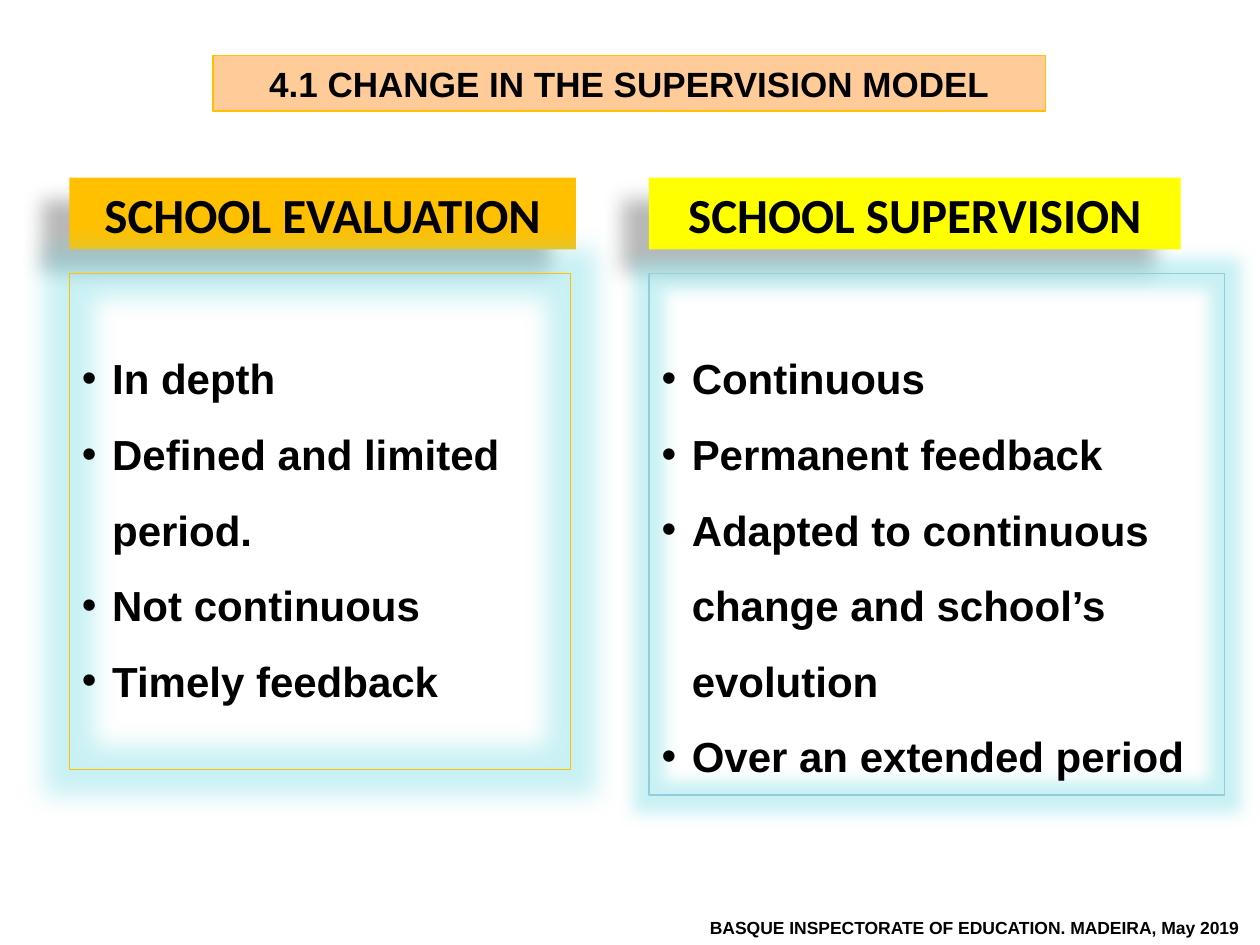
from lxml.etree import SubElement as Sub
from pptx import Presentation
from pptx.dml.color import RGBColor as RGB
from pptx.enum.text import MSO_ANCHOR as Anchor, MSO_AUTO_SIZE as Fit, PP_ALIGN as Align
from pptx.oxml.ns import qn
from pptx.util import Inches, Pt

BLACK = RGB(0, 0, 0)
AMBER = RGB(0xFF, 0xC0, 0x00)
YELLOW = RGB(0xFF, 0xFF, 0x00)
PEACH = RGB(0xFF, 0xCC, 0x99)
TEAL = RGB(0x92, 0xCD, 0xDC)
AQUA = RGB(0x78, 0xDC, 0xE4)
TOP, HEAD, GAP = 1.41, 0.57, 0.19
INDENT, DROP = 0.24, 0.43


def place(shape, x, y, w, h):
    """Move a shape to a box given in inches."""
    shape.left, shape.top = Inches(x), Inches(y)
    shape.width, shape.height = Inches(w), Inches(h)


def style(par, size, name="Arial"):
    """Give a paragraph bold black type with no space before."""
    par.space_before = Pt(0)
    font = par.font
    font.size, font.name, font.bold = Pt(size), name, True
    font.color.rgb = BLACK


def effect(shape, kind, color, alpha, **attrs):
    """Add a glow or shadow to a shape."""
    group = Sub(shape._element.spPr, qn("a:effectLst"))
    node = Sub(group, qn("a:" + kind), {k: str(v) for k, v in attrs.items()})
    tint = Sub(node, qn("a:srgbClr"), val=str(color))
    Sub(tint, qn("a:alpha"), val=str(alpha * 1000))


def border(shape, color):
    """Draw a thin outline."""
    shape.line.color.rgb = color
    shape.line.width = Pt(0.75)


def label(shape, box, text, fill, size, name="Arial"):
    """Fill a placeholder as a centred one-line banner."""
    place(shape, *box)
    shape.fill.solid()
    shape.fill.fore_color.rgb = fill
    frame = shape.text_frame
    frame.text = text
    frame.auto_size = Fit.NONE
    frame.vertical_anchor = Anchor.MIDDLE
    par = frame.paragraphs[0]
    par.alignment = Align.CENTER
    style(par, size, name)


def points(shape, box, items, line, glow):
    """Fill a placeholder as an outlined, glowing bullet list."""
    place(shape, *box)
    shape.fill.background()
    border(shape, line)
    effect(shape, "glow", AQUA, 40, rad=Pt(glow))
    frame = shape.text_frame
    frame.text = "\n".join(items)
    frame.auto_size = Fit.NONE
    frame.vertical_anchor = Anchor.TOP
    frame.margin_top = Inches(DROP)
    for par in frame.paragraphs:
        props = par._p.get_or_add_pPr()
        props.set("marL", str(Inches(INDENT)))
        props.set("indent", str(-Inches(INDENT)))
        Sub(props, qn("a:buFont"), typeface="Arial")
        Sub(props, qn("a:buChar"), char="•")
        par.line_spacing = 1.5
        style(par, 24)


def column(head, body, x, wide, box, title, fill, items, line, glow):
    """Set a heading with its list below, from the left edge x."""
    label(head, (x, TOP, wide, HEAD), title, fill, 28, "Calibri")
    effect(head, "outerShdw", BLACK, 28, blurRad=Pt(11.8), dist=Pt(19.7),
           dir=141 * 60000, algn="ctr", rotWithShape=0)
    points(body, (x, TOP + HEAD + GAP, *box), items, line, glow)


def footer(slide, box, text):
    """Write the source line at the lower right."""
    note = slide.shapes.add_textbox(0, 0, 0, 0)
    place(note, *box)
    frame = note.text_frame
    frame.word_wrap = False
    frame.text = text
    par = frame.paragraphs[0]
    par.alignment = Align.RIGHT
    style(par, 10)


def main():
    """Build the slide and save it."""
    deck = Presentation()
    deck.slide_width, deck.slide_height = Inches(10), Inches(7.5)
    slide = deck.slides.add_slide(deck.slide_layouts[4])
    title, head1, body1, head2, body2 = slide.placeholders
    label(title, (1.69, 0.44, 6.61, 0.44),
          "4.1 CHANGE IN THE SUPERVISION MODEL", PEACH, 20)
    border(title, AMBER)
    column(head1, body1, 0.55, 4.02, (3.98, 3.94), "SCHOOL EVALUATION", AMBER,
           ["In depth", "Defined and limited period.", "Not continuous",
            "Timely feedback"], AMBER, 28)
    column(head2, body2, 5.15, 4.22, (4.57, 4.14), "SCHOOL SUPERVISION", YELLOW,
           ["Continuous", "Permanent feedback",
            "Adapted to continuous change and school’s evolution",
            "Over an extended period"], TEAL, 18)
    footer(slide, (5.53, 7.23, 4.4, 0.27),
           "BASQUE INSPECTORATE OF EDUCATION. MADEIRA, May 2019")
    deck.save("out.pptx")


if __name__ == "__main__":
    main()
